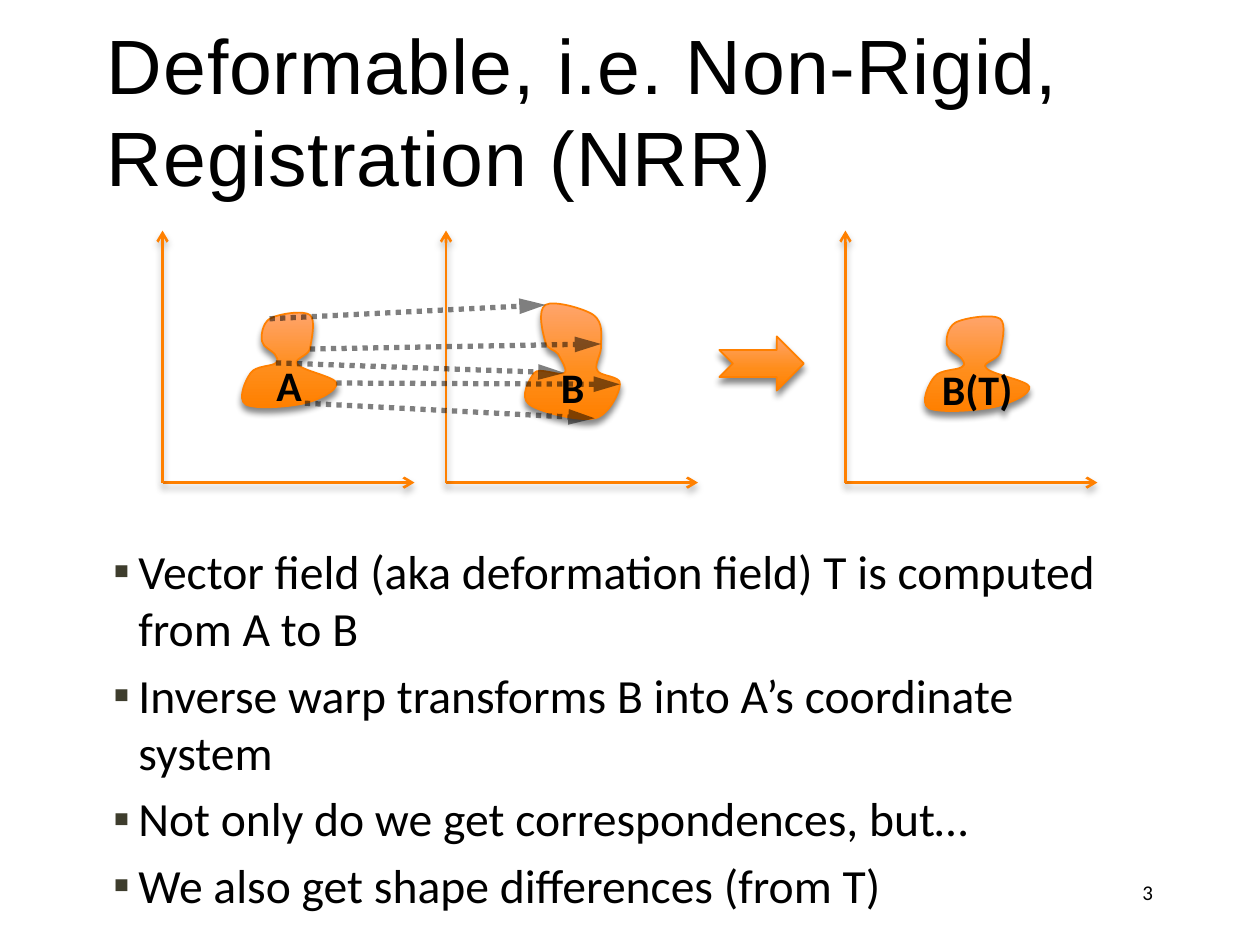
import pptx
import pptx.dml.color
import pptx.enum.dml
import pptx.enum.shapes
import pptx.enum.text
import pptx.oxml
import pptx.oxml.ns
import pptx.util
from lxml import etree

Inches, Pt, qn = pptx.util.Inches, pptx.util.Pt, pptx.oxml.ns.qn
ORANGE, BLACK, BULLET = "FF8000", "000000", "3E3D2D"
GRADIENT = [(0, "FFA46B"), (60, "FF8D1A"), (100, ORANGE)]

# Outlines on a grid of 1/100 inch: columns, rows, a start point, then Bezier
# segments (two control points and an end point each).
OUTLINE_A = (75, 75, (26, 33), [
    (24, 30, 17, 28, 16, 23), (15, 19, 16, 9, 22, 5), (29, 1, 49, -2, 54, 2),
    (59, 6, 55, 22, 54, 29), (52, 35, 40, 37, 44, 41), (47, 46, 74, 51, 75, 56),
    (76, 62, 62, 69, 50, 72), (38, 75, 10, 77, 3, 73), (-4, 69, 3, 53, 7, 48),
    (11, 42, 24, 43, 27, 40), (30, 38, 27, 35, 26, 33)])
OUTLINE_B = (75, 92, (26, 40), [
    (23, 36, 18, 37, 16, 31), (14, 24, 9, 5, 16, 1), (22, -3, 47, 4, 54, 9),
    (62, 15, 60, 25, 60, 32), (61, 40, 54, 48, 57, 53), (59, 58, 76, 57, 75, 64),
    (75, 70, 66, 89, 55, 91), (43, 94, 11, 86, 3, 80), (-5, 74, 3, 60, 7, 55),
    (11, 50, 27, 58, 31, 55), (34, 53, 28, 44, 26, 40)])
MATCHED_SEGMENTS = [6, 5, 9, 1, 3]

BOX_A = (1.92, 2.48, 0.75, 0.75)
BOX_B = (4.17, 2.41, 0.75, 0.92)
BOX_WARPED = (7.34, 2.51, 0.83, 0.75)
PANEL_LEFTS = (1.29, 3.54, 6.71)
PANEL_TOP, PANEL_SIZE = 1.83, 2

BULLETS = [
    "Vector field (aka deformation field) T is computed from A to B",
    "Inverse warp transforms B into A’s coordinate system",
    "Not only do we get correspondences, but…",
    "We also get shape differences (from T)",
]


def color(value):
    return pptx.dml.color.RGBColor.from_string(value)


def child(parent, tag, **attributes):
    element = etree.SubElement(parent, qn(tag))
    for name, value in attributes.items():
        element.set(name, str(value))
    return element


def set_shadow(shape, opacity=None, blur=0):
    """Give a downward shadow, or none when no opacity is given."""
    effects = child(shape.element.spPr, "a:effectLst")
    if opacity:
        outer = child(effects, "a:outerShdw", blurRad=Pt(blur), dist=Pt(3),
                      dir=90 * 60000, rotWithShape=0)
        black = child(outer, "a:srgbClr", val=BLACK)
        child(black, "a:alpha", val=opacity * 1000)


def paint_orange(shape):
    shape.fill.gradient()
    shape.fill.gradient_angle = 270
    stops = shape.element.spPr.find(qn("a:gradFill")).find(qn("a:gsLst"))
    for stop in list(stops):
        stops.remove(stop)
    for position, value in GRADIENT:
        stop = child(stops, "a:gs", pos=position * 1000)
        child(stop, "a:srgbClr", val=value)
    shape.line.color.rgb = color(ORANGE)
    shape.line.width = Pt(1)
    set_shadow(shape, 48, 3.8)


def add_run(paragraph, text, size, font="Calibri", bold=False):
    run = paragraph.add_run()
    run.text = text
    run.font.name, run.font.size, run.font.bold = font, Pt(size), bold
    run.font.color.rgb = color(BLACK)
    return run


def add_text_frame(slide, box, anchor):
    frame = slide.shapes.add_textbox(*map(Inches, box)).text_frame
    frame.word_wrap = True
    frame.vertical_anchor = anchor
    return frame


def add_arrow(group, start, end, value, width, head, head_length="med"):
    arrow = group.shapes.add_connector(
        pptx.enum.shapes.MSO_CONNECTOR.STRAIGHT, *map(Inches, (*start, *end)))
    arrow.line.color.rgb = color(value)
    arrow.line.width = Pt(width)
    child(arrow.line._get_or_add_ln(), "a:tailEnd", type=head, len=head_length)
    return arrow


def add_axes(group, left, top, size):
    origin = (left, top + size)
    for end in ((left + size, top + size), (left, top)):
        set_shadow(add_arrow(group, origin, end, ORANGE, 1.5, "arrow"), 28, 4)


def place(point, outline, box):
    """Map a point on the outline's grid into the box, in inches."""
    columns, rows = outline[:2]
    left, top, width, height = box
    return left + point[0] / columns * width, top + point[1] / rows * height


def draw_curves(shape, outline):
    """Replace the shape's straight sides with the outline's curves."""
    columns, rows, start, segments = outline
    path = next(shape.element.iter(qn("a:path")))
    for step in list(path):
        path.remove(step)
    path.set("w", str(columns))
    path.set("h", str(rows))
    child(child(path, "a:moveTo"), "a:pt", x=start[0], y=start[1])
    for segment in segments:
        curve = child(path, "a:cubicBezTo")
        for x, y in zip(segment[::2], segment[1::2]):
            child(curve, "a:pt", x=x, y=y)
    child(path, "a:close")


def add_figure(group, outline, box, label):
    left, top, width, height = map(Inches, box)
    builder = group.shapes.build_freeform(left, top)
    builder.add_line_segments([(left + width, top), (left + width, top + height),
                               (left, top + height)])
    figure = builder.convert_to_shape()
    draw_curves(figure, outline)
    paint_orange(figure)
    frame = figure.text_frame
    frame.word_wrap = False
    frame.vertical_anchor = pptx.enum.text.MSO_ANCHOR.MIDDLE
    frame.margin_top, frame.margin_bottom = Inches(0.45), Inches(0.05)
    paragraph = frame.paragraphs[0]
    paragraph.alignment = pptx.enum.text.PP_ALIGN.CENTER
    add_run(paragraph, label, 24, bold=True)


def add_panel(slide, left, outline, box, label):
    group = slide.shapes.add_group_shape()
    add_axes(group, left, PANEL_TOP, PANEL_SIZE)
    add_figure(group, outline, box, label)
    return group


def add_vector_field(slide, box_a, box_b):
    """Join matching outline points of the two figures."""
    group = slide.shapes.add_group_shape()
    for index in MATCHED_SEGMENTS:
        start, end = (place(outline[3][index][4:], outline, box)
                      for outline, box in ((OUTLINE_A, box_a), (OUTLINE_B, box_b)))
        arrow = add_arrow(group, start, end, BLACK, 3, "triangle", "lg")
        arrow.line.dash_style = pptx.enum.dml.MSO_LINE.ROUND_DOT
        fill = arrow.line._get_or_add_ln().find(qn("a:solidFill"))
        child(fill[0], "a:alpha", val=50000)
        set_shadow(arrow)


def add_diagram(slide):
    left_a, left_b, left_warped = PANEL_LEFTS
    add_panel(slide, left_a, OUTLINE_A, BOX_A, "A")
    add_panel(slide, left_b, OUTLINE_B, BOX_B, "B")
    add_vector_field(slide, BOX_A, BOX_B)
    result = add_panel(slide, left_warped, OUTLINE_A, BOX_WARPED, "B(T)")
    paint_orange(result.shapes.add_shape(
        pptx.enum.shapes.MSO_SHAPE.NOTCHED_RIGHT_ARROW,
        *map(Inches, (5.71, 2.67, 0.67, 0.43))))


def add_title(slide, box):
    frame = add_text_frame(slide, box, pptx.enum.text.MSO_ANCHOR.MIDDLE)
    run = add_run(frame.paragraphs[0], "Deformable, i.e. Non-Rigid, Registration (NRR)",
                  44, "Arial")
    run.font._element.set("spc", "50")


def add_bullets(slide, box):
    frame = add_text_frame(slide, box, pptx.enum.text.MSO_ANCHOR.TOP)
    for index, text in enumerate(BULLETS):
        paragraph = frame.add_paragraph() if index else frame.paragraphs[0]
        if index:
            paragraph.space_before = Pt(5.4)
        properties = paragraph._p.get_or_add_pPr()
        properties.set("marL", str(Inches(0.25)))
        properties.set("indent", str(Inches(-0.2)))
        child(child(properties, "a:buClr"), "a:srgbClr", val=BULLET)
        child(properties, "a:buFont", typeface="Arial")
        child(properties, "a:buChar", char="▪")
        add_run(paragraph, text, 27.2)


def add_slide_number(slide, box):
    frame = add_text_frame(slide, box, pptx.enum.text.MSO_ANCHOR.MIDDLE)
    frame.paragraphs[0].alignment = pptx.enum.text.PP_ALIGN.RIGHT
    add_run(frame.paragraphs[0], "3", 12)


def main():
    presentation = pptx.Presentation()
    presentation.slide_width, presentation.slide_height = Inches(10), Inches(7.5)
    slide = presentation.slides.add_slide(presentation.slide_layouts[6])
    add_bullets(slide, (0.75, 4.25, 8.5, 2.42))
    add_slide_number(slide, (7.17, 6.83, 2.08, 0.5))
    add_title(slide, (0.75, 0.25, 8.5, 1.24))
    add_diagram(slide)
    presentation.save("out.pptx")


if __name__ == "__main__":
    main()
